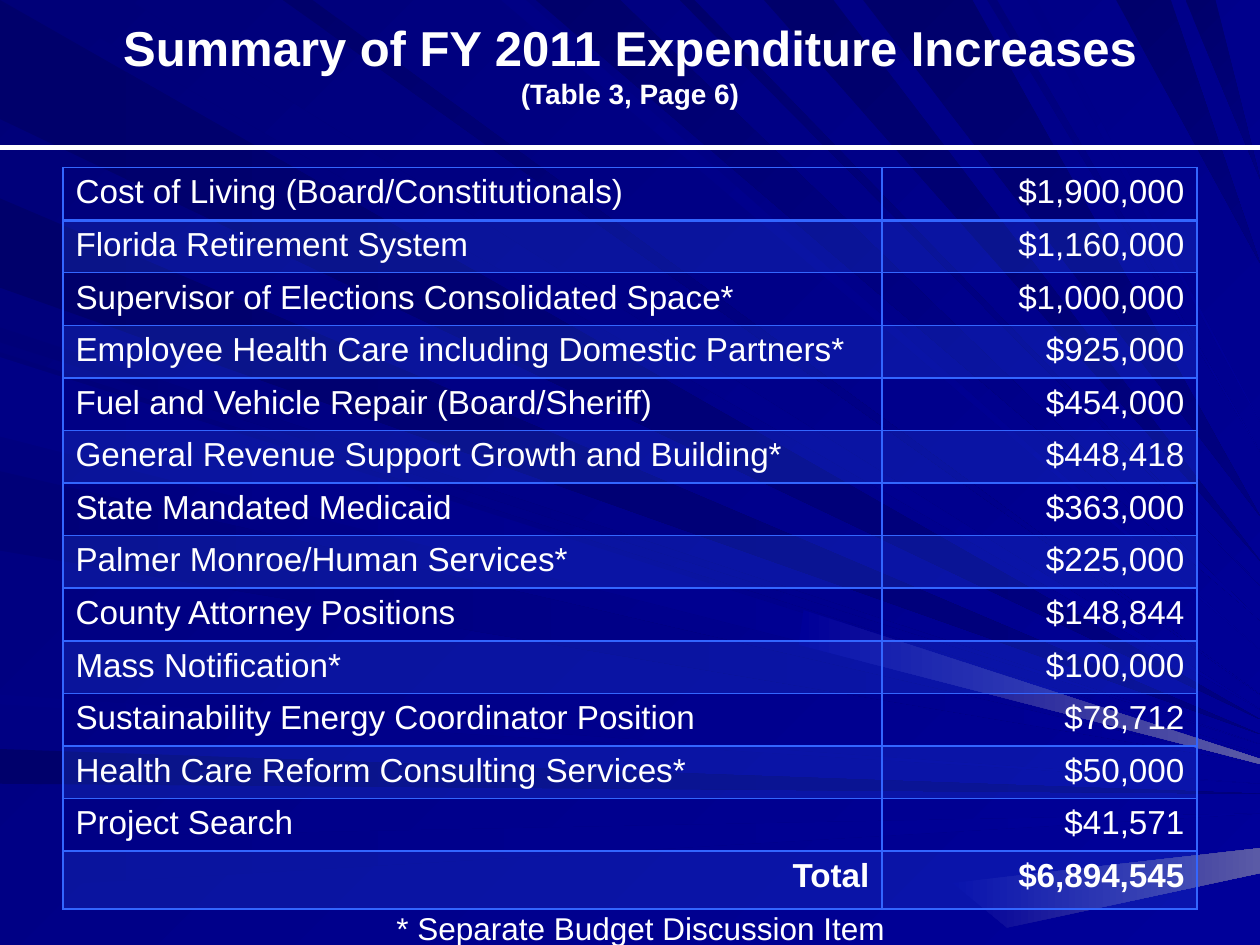
import lxml.etree
import pptx
import pptx.dml.color
import pptx.enum.shapes
import pptx.enum.text
import pptx.oxml.ns
import pptx.util

Cm = pptx.util.Cm
RGBColor = pptx.dml.color.RGBColor
ALIGN = pptx.enum.text.PP_ALIGN

FONT = "Arial"
WHITE = RGBColor(0xFF, 0xFF, 0xFF)
ACCENT = RGBColor(0x33, 0x66, 0xFF)
BLUE = RGBColor(0x00, 0x00, 0x99)
NAVY = RGBColor(0x00, 0x00, 0x80)
DEEP = RGBColor(0x00, 0x00, 0x78)
INK = RGBColor(0x00, 0x00, 0x6B)
DUSK = RGBColor(0x00, 0x00, 0x85)
HAZE = RGBColor(0x5A, 0x5A, 0xA6)

# Rays narrow to a tip on the right edge: start and end of the base, height of
# the tip (all in cm), first and last colour.
LEFT_RAYS = [
    (0, 2.4, 14.5, INK, NAVY),
    (15.1, 15.8, 16, INK, NAVY),
    (16.9, 17.9, 16.4, DUSK, BLUE),
    (6.6, 6.9, 15, DEEP, BLUE),
    (4, 5.8, 14.8, INK, NAVY),
    (7.1, 8.7, 15.2, DEEP, BLUE),
    (9.5, 11.1, 15.4, DEEP, BLUE),
    (14, 14.2, 15.8, DUSK, BLUE),
    (7.2, 8.8, 15.3, DUSK, BLUE),
]
TOP_RAYS = [
    (0.7, 2.6, 14.3, DEEP, BLUE),
    (10.1, 10.6, 13.1, DUSK, BLUE),
    (10.8, 12.5, 12.5, INK, BLUE),
    (13.7, 14, 11.8, INK, BLUE),
    (15.4, 16.8, 11.3, INK, NAVY),
    (5.7, 6.3, 14, INK, BLUE),
    (17.4, 19.6, 10.4, INK, NAVY),
    (19.9, 20.1, 9.1, DEEP, BLUE),
    (20.7, 20.9, 8.5, DUSK, BLUE),
    (22.5, 23.6, 5.3, INK, NAVY),
    (23.9, 24.5, 3.6, INK, NAVY),
]
GLOWS = [
    [(16.1, 13), (16.2, 12.3), (25.4, 15.3), (25.4, 15.4)],
    [(19.2, 17.8), (25.4, 17.1), (25.4, 17.6), (20.3, 18.7)],
]

EXPENDITURES = [
    ("Cost of Living (Board/Constitutionals)", "$1,900,000"),
    ("Florida Retirement System", "$1,160,000"),
    ("Supervisor of Elections Consolidated Space*", "$1,000,000"),
    ("Employee Health Care including Domestic Partners*", "$925,000"),
    ("Fuel and Vehicle Repair (Board/Sheriff)", "$454,000"),
    ("General Revenue Support Growth and Building*", "$448,418"),
    ("State Mandated Medicaid", "$363,000"),
    ("Palmer Monroe/Human Services*", "$225,000"),
    ("County Attorney Positions", "$148,844"),
    ("Mass Notification*", "$100,000"),
    ("Sustainability Energy Coordinator Position", "$78,712"),
    ("Health Care Reform Consulting Services*", "$50,000"),
    ("Project Search", "$41,571"),
    ("Total", "$6,894,545"),
]
ROW_HEIGHT = 1.03
SPECIAL_HEIGHTS = {1: 1.02, 8: 1.07, 13: 1.17}


def write(paragraph, text, size, bold=False, align=ALIGN.LEFT):
    paragraph.alignment = align
    run = paragraph.add_run()
    run.text = text
    run.font.name = FONT
    run.font.size = pptx.util.Pt(size)
    run.font.bold = bold
    run.font.color.rgb = WHITE


def fill_gradient(fill, first, last, angle):
    """Fill from first to last colour, the angle running clockwise."""
    fill.gradient()
    fill.gradient_angle = (360 - angle) % 360
    for stop, colour in zip(fill.gradient_stops, (first, last)):
        stop.color.rgb = colour


def add_ray(slide, left, top, corners, first, last, angle):
    points = [(Cm(left + x), Cm(top + y)) for x, y in corners]
    builder = slide.shapes.build_freeform(*points[0])
    builder.add_line_segments(points[1:], close=True)
    ray = builder.convert_to_shape()
    ray.shadow.inherit = False
    ray.line.fill.background()
    fill_gradient(ray.fill, first, last, angle)


def add_backdrop(slide, left, top, width):
    fill_gradient(slide.background.fill, DEEP, BLUE, 45)
    for start, end, tip, first, last in LEFT_RAYS:
        add_ray(slide, left, top, [(0, start), (0, end), (width, tip)], first, last, 0)
    for start, end, tip, first, last in TOP_RAYS:
        add_ray(slide, left, top, [(start, 0), (end, 0), (width, tip)], first, last, 45)
    for corners in GLOWS:
        add_ray(slide, left, top, corners, BLUE, HAZE, 0)


def add_text_frame(slide, left, top, width, height):
    box = slide.shapes.add_textbox(Cm(left), Cm(top), Cm(width), Cm(height))
    box.text_frame.word_wrap = True
    return box.text_frame


def add_heading(slide, left, top, width, height):
    """Place the title and its subtitle with the rule that closes the region."""
    frame = add_text_frame(slide, left + 1.27, top + 0.35, width - 2.54, height - 0.7)
    frame.margin_top = frame.margin_bottom = 0
    write(frame.paragraphs[0], "Summary of FY 2011 Expenditure Increases", 28,
          bold=True, align=ALIGN.CENTER)
    write(frame.add_paragraph(), "(Table 3, Page 6)", 16, bold=True, align=ALIGN.CENTER)

    bottom = Cm(top + height)
    rule = slide.shapes.add_connector(pptx.enum.shapes.MSO_CONNECTOR.STRAIGHT,
                                      Cm(left), bottom, Cm(left + width), bottom)
    rule.line.color.rgb = WHITE
    rule.line.width = pptx.util.Pt(3)
    lxml.etree.SubElement(rule._element.spPr, pptx.oxml.ns.qn("a:effectLst"))


def set_borders(cell, **widths):
    """Draw all four borders, 1 pt wide unless a side (L, R, T, B) is given."""
    properties = cell._tc.get_or_add_tcPr()
    for side in "LRTB":
        width = pptx.util.Pt(widths.get(side, 1))
        line = lxml.etree.SubElement(properties, pptx.oxml.ns.qn("a:ln" + side), w=str(width))
        fill = lxml.etree.SubElement(line, pptx.oxml.ns.qn("a:solidFill"))
        lxml.etree.SubElement(fill, pptx.oxml.ns.qn("a:srgbClr"), val=str(ACCENT))


def set_band(cell, tinted):
    if not tinted:
        cell.fill.background()
        return
    cell.fill.solid()
    cell.fill.fore_color.rgb = ACCENT
    colour = cell._tc.tcPr.find(pptx.oxml.ns.qn("a:solidFill"))[0]
    lxml.etree.SubElement(colour, pptx.oxml.ns.qn("a:alpha"), val="20000")


def add_expenditure_table(slide, left, top, width):
    heights = [SPECIAL_HEIGHTS.get(i, ROW_HEIGHT) for i in range(len(EXPENDITURES))]
    table = slide.shapes.add_table(len(EXPENDITURES), 2, Cm(left), Cm(top),
                                   Cm(width), Cm(sum(heights))).table
    table.first_row = table.horz_banding = False
    amount_width = 6.35
    table.columns[0].width = Cm(width - amount_width)
    table.columns[1].width = Cm(amount_width)
    for i, (entry, height) in enumerate(zip(EXPENDITURES, heights)):
        table.rows[i].height = Cm(height)
        is_total = i == len(EXPENDITURES) - 1
        for j, text in enumerate(entry):
            cell = table.cell(i, j)
            set_borders(cell, T=2 if i == 1 else 1, B=2 if i == 0 else 1)
            set_band(cell, tinted=i % 2 == 1)
            write(cell.text_frame.paragraphs[0], text, 19, bold=is_total,
                  align=ALIGN.RIGHT if j or is_total else ALIGN.LEFT)


def add_footnote(slide, left, top, width, height):
    frame = add_text_frame(slide, left, top, width, height)
    write(frame.paragraphs[0], "* Separate Budget Discussion Item", 18, align=ALIGN.CENTER)


def main():
    presentation = pptx.Presentation()
    presentation.slide_width = Cm(25.4)
    presentation.slide_height = Cm(19.05)
    slide = presentation.slides.add_slide(presentation.slide_layouts[6])
    add_backdrop(slide, 0, 0, 25.4)
    add_heading(slide, 0, 0, 25.4, 2.97)
    add_expenditure_table(slide, 1.27, 3.38, 22.86)
    add_footnote(slide, 6.35, 18.21, 13.13, 1.02)
    presentation.save("out.pptx")


if __name__ == "__main__":
    main()
